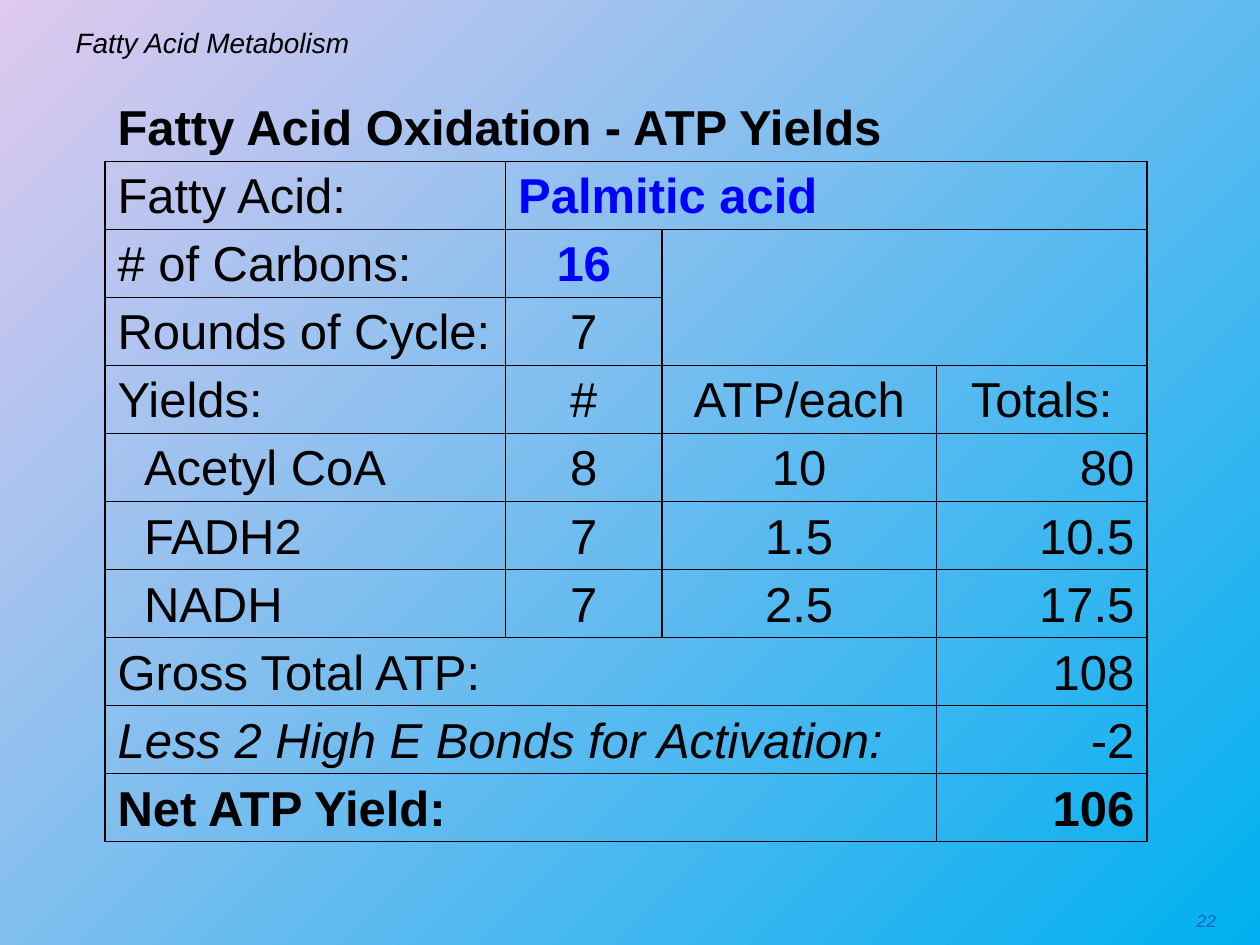
import pptx
import pptx.util
import pptx.dml.color
import pptx.enum.text
import pptx.oxml
import pptx.oxml.ns

COLORS = {"text": "000000", "accent": "0000FF", "number": "0066CC",
          "start": "DFC9EF", "end": "00B0F0"}
ALIGN = pptx.enum.text.PP_ALIGN
ANCHOR = pptx.enum.text.MSO_ANCHOR
rgb = pptx.dml.color.RGBColor.from_string

prs = pptx.Presentation()
prs.slide_width = pptx.util.Inches(10)
prs.slide_height = pptx.util.Inches(7.5)
unit = prs.slide_width / 100


def write(tf, text, align, size, color="text", bold=False, italic=False):
    p = tf.paragraphs[0]
    p.alignment = align
    r = p.add_run()
    r.text = text
    font = {"name": "Arial", "size": pptx.util.Pt(size), "bold": bold, "italic": italic}
    for key, value in font.items():
        setattr(r.font, key, value)
    r.font.color.rgb = rgb(COLORS[color])


def add_border(cell, side, visible):
    ns = pptx.oxml.ns.nsdecls("a")
    solid = f'<a:solidFill><a:srgbClr val="{COLORS["text"]}"/></a:solidFill>'
    cell._tc.get_or_add_tcPr().append(pptx.oxml.parse_xml(
        f'<a:ln{side} {ns} w="12700">{solid if visible else "<a:noFill/>"}</a:ln{side}>'))


s = prs.slides.add_slide(prs.slide_layouts[5])
fill = s.background.fill
fill.gradient()
fill.gradient_angle = 315
for stop, name in zip(fill.gradient_stops, ("start", "end")):
    stop.color.rgb = rgb(COLORS[name])

title = s.shapes.title
number = s.shapes.add_textbox(0, 0, 0, 0)
for sp, text, box, align, size, color in (
    (title, "Fatty Acid Metabolism", (5, 1.7, 90, 3.3), ALIGN.LEFT, 16, "text"),
    (number, "22", (91.7, 71.7, 5.8, 3.3), ALIGN.RIGHT, 10, "number"),
):
    sp.left, sp.top, sp.width, sp.height = (int(v * unit) for v in box)
    tf = sp.text_frame
    tf.word_wrap = True
    tf.auto_size = pptx.enum.text.MSO_AUTO_SIZE.NONE
    write(tf, text, align, size, color, italic=True)
title.text_frame.vertical_anchor = ANCHOR.MIDDLE

COLUMNS = (31.8, 4, 8.4, 21.8, 16.7)
ROWS = (7,) + (5.4,) * 10
L, C, R = ALIGN.LEFT, ALIGN.CENTER, ALIGN.RIGHT
BOLD, ITALIC, ACCENT = {"bold": True}, {"italic": True}, {"bold": True, "color": "accent"}
CELLS = [
    [("Fatty Acid Oxidation - ATP Yields", 4, L, "B", BOLD), ("", 1, L, "B", {})],
    [("Fatty Acid:", 1, L, "LRTB", {}), ("Palmitic acid", 3, L, "LTB", ACCENT),
     ("", 1, L, "RTB", {})],
    [("# of Carbons:", 1, L, "LRTB", {}), ("16", 2, C, "LRTB", ACCENT),
     ("", 1, L, "LT", {}), ("", 1, L, "RT", {})],
    [("Rounds of Cycle:", 1, L, "LRTB", {}), ("7", 2, C, "LRTB", {}),
     ("", 1, L, "LB", {}), ("", 1, L, "RB", {})],
]
for label, count, each, total, align in (
    ("Yields:", "#", "ATP/each", "Totals:", C),
    ("Acetyl CoA", "8", "10", "80", R),
    ("FADH2", "7", "1.5", "10.5", R),
    ("NADH", "7", "2.5", "17.5", R),
):
    CELLS.append([(label, 1, L, "LRTB", {}), (count, 2, C, "LRTB", {}),
                  (each, 1, C, "LRTB", {}), (total, 1, align, "LRTB", {})])
CELLS += [
    [("Gross Total ATP:", 1, L, "LTB", {}), ("", 2, L, "TB", {}),
     ("", 1, L, "RTB", {}), ("108", 1, R, "LRTB", {})],
    [("Less 2 High E Bonds for Activation:", 4, L, "LRTB", ITALIC),
     ("-2", 1, R, "LRTB", {})],
    [("Net ATP Yield:", 2, L, "LTB", BOLD), ("", 1, L, "TB", {}),
     ("", 1, L, "RTB", {}), ("106", 1, R, "LRTB", BOLD)],
]

frame = s.shapes.add_table(len(ROWS), len(COLUMNS), int(8.33 * unit), int(5.8 * unit),
                           int(sum(COLUMNS) * unit), int(sum(ROWS) * unit))
table = frame.table
table.first_row = table.horz_banding = False
for column, width in zip(table.columns, COLUMNS):
    column.width = int(width * unit)
for row, height in zip(table.rows, ROWS):
    row.height = int(height * unit)

for i, line in enumerate(CELLS):
    j = 0
    for text, span, align, sides, style in line:
        last = j + span - 1
        for k in range(j, last + 1):
            cell = table.cell(i, k)
            for side in "LRTB":
                inner = (side == "L" and k > j) or (side == "R" and k < last)
                add_border(cell, side, side in sides and not inner)
            cell.fill.background()
        cell = table.cell(i, j)
        if span > 1:
            cell.merge(table.cell(i, last))
        cell.vertical_anchor = ANCHOR.BOTTOM
        cell.margin_top = cell.margin_bottom = int(0.4 * unit)
        cell.margin_left = int((3.1 if j == 0 and 5 <= i <= 7 else 1) * unit)
        if text:
            write(cell.text_frame, text, align, 28, **style)
        else:
            font = cell.text_frame.paragraphs[0].font
            for key, value in {"name": "Arial", "size": pptx.util.Pt(18)}.items():
                setattr(font, key, value)
        j += span

prs.save("out.pptx")
